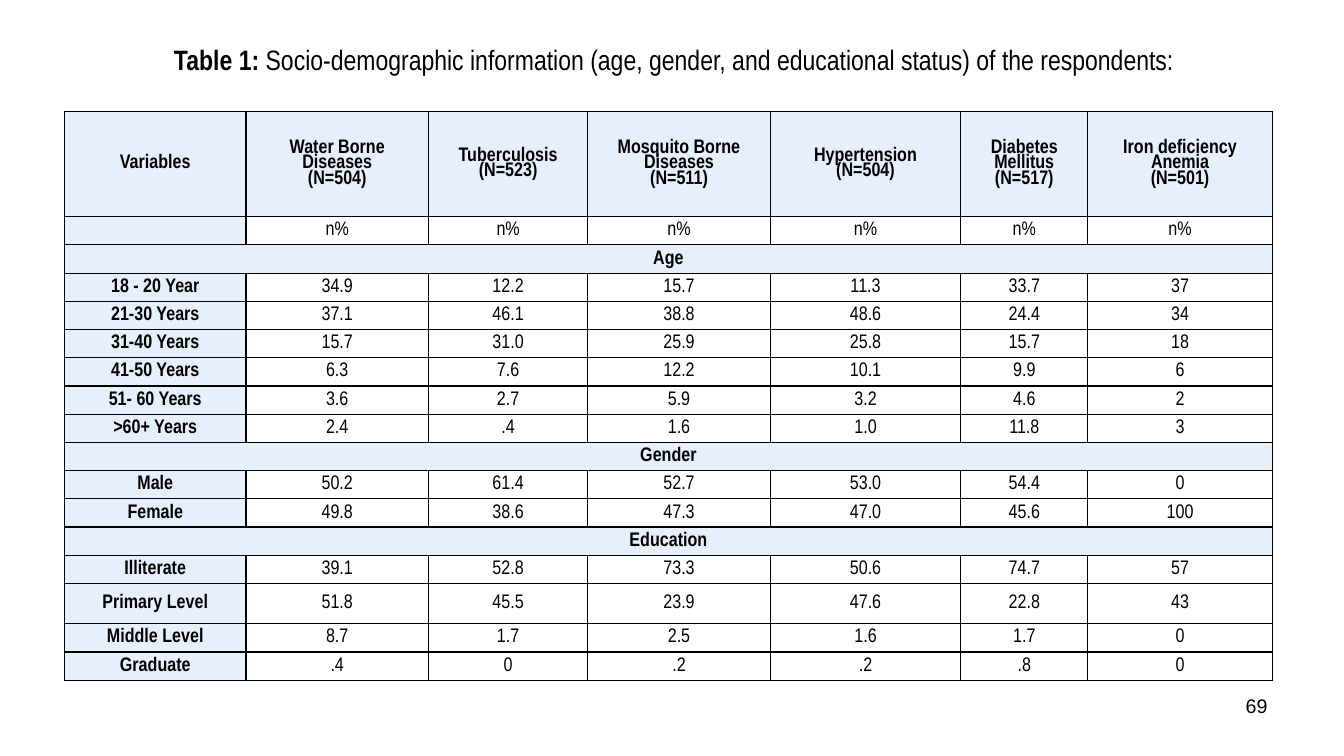
from dataclasses import dataclass

from lxml import etree
from pptx import Presentation
from pptx.dml.color import RGBColor
from pptx.enum.text import MSO_ANCHOR, MSO_AUTO_SIZE, PP_ALIGN
from pptx.oxml.ns import qn
from pptx.util import Inches, Pt

CENTER, RIGHT = PP_ALIGN.CENTER, PP_ALIGN.RIGHT
TOP, MIDDLE, BOTTOM = MSO_ANCHOR.TOP, MSO_ANCHOR.MIDDLE, MSO_ANCHOR.BOTTOM
NO_FIT = MSO_AUTO_SIZE.NONE


@dataclass(frozen=True)
class Theme:
    ink: str = "000000"
    tint: str = "E5F0FC"
    plain: str = "FFFFFF"
    font: str = "Arial Narrow"
    page_font: str = "Arial"
    title_size: int = 20
    body_size: int = 14
    head_gap: float = 0.83
    rule: int = 1


WIDTHS = [1.8, 1.81, 1.58, 1.81, 1.89, 1.26, 1.83]
HEAD_HIGH, ROW_HIGH, TALL_HIGH = 1.04, 0.28, 0.4
TALL_ROW = "Primary Level"

HEADS = [
    ["Variables"],
    ["Water Borne Diseases", "(N=504)"],
    ["Tuberculosis", "(N=523)"],
    ["Mosquito Borne Diseases", "(N=511)"],
    ["Hypertension", "(N=504)"],
    ["Diabetes Mellitus", "(N=517)"],
    ["Iron deficiency Anemia", "(N=501)"],
]

GROUPS = {
    "Age": [
        ["18 - 20 Year", "34.9", "12.2", "15.7", "11.3", "33.7", "37"],
        ["21-30 Years", "37.1", "46.1", "38.8", "48.6", "24.4", "34"],
        ["31-40 Years", "15.7", "31.0", "25.9", "25.8", "15.7", "18"],
        ["41-50 Years", "6.3", "7.6", "12.2", "10.1", "9.9", "6"],
        ["51- 60 Years", "3.6", "2.7", "5.9", "3.2", "4.6", "2"],
        [">60+ Years", "2.4", ".4", "1.6", "1.0", "11.8", "3"],
    ],
    "Gender": [
        ["Male", "50.2", "61.4", "52.7", "53.0", "54.4", "0"],
        ["Female", "49.8", "38.6", "47.3", "47.0", "45.6", "100"],
    ],
    "Education": [
        ["Illiterate", "39.1", "52.8", "73.3", "50.6", "74.7", "57"],
        ["Primary Level", "51.8", "45.5", "23.9", "47.6", "22.8", "43"],
        ["Middle Level", "8.7", "1.7", "2.5", "1.6", "1.7", "0"],
        ["Graduate", ".4", "0", ".2", ".2", ".8", "0"],
    ],
}


class Deck:
    def __init__(self, theme):
        self.theme = theme
        self.show = Presentation()
        self.show.slide_width = Inches(13.33)
        self.show.slide_height = Inches(7.5)
        self.slide = self.show.slides.add_slide(self.show.slide_layouts[5])

    def style(self, font, size, bold=False, face=None):
        font.name = face or self.theme.font
        font.size = Pt(size)
        font.bold = bold
        font.color.rgb = RGBColor.from_string(self.theme.ink)

    def run(self, para, text, size, bold=False, face=None):
        run = para.add_run()
        run.text = text
        self.style(run.font, size, bold, face)

    def frame(self, shape, box, anchor, align):
        """Place a text shape and return its first paragraph."""
        shape.left, shape.top, shape.width, shape.height = map(Inches, box)
        text = shape.text_frame
        text.word_wrap = True
        text.auto_size = NO_FIT
        text.vertical_anchor = anchor
        para = text.paragraphs[0]
        para.alignment = align
        return para

    def title(self, box, label, text):
        para = self.frame(self.slide.shapes.title, box, BOTTOM, CENTER)
        self.run(para, label, self.theme.title_size, bold=True)
        self.run(para, text, self.theme.title_size)

    def page(self, box, number):
        shape = self.slide.shapes.add_textbox(*map(Inches, box))
        para = self.frame(shape, box, TOP, RIGHT)
        self.run(para, number, self.theme.body_size, face=self.theme.page_font)

    def edge(self, cell):
        """Rule all four sides; lines must come before the fill."""
        props = cell._tc.get_or_add_tcPr()
        for place, side in enumerate(("a:lnL", "a:lnR", "a:lnT", "a:lnB")):
            line = etree.Element(qn(side), w=str(Pt(self.theme.rule)))
            fill = etree.SubElement(line, qn("a:solidFill"))
            etree.SubElement(fill, qn("a:srgbClr"), val=self.theme.ink)
            props.insert(place, line)

    def cell(self, cell, lines, strong, gap=None):
        theme = self.theme
        cell.margin_left = cell.margin_right = Inches(0.07)
        cell.margin_top = cell.margin_bottom = 0
        cell.vertical_anchor = MIDDLE
        cell.fill.solid()
        color = theme.tint if strong else theme.plain
        cell.fill.fore_color.rgb = RGBColor.from_string(color)
        self.edge(cell)
        text = cell.text_frame
        for i, line in enumerate(lines):
            para = text.add_paragraph() if i else text.paragraphs[0]
            para.alignment = CENTER
            if gap:
                para.line_spacing = gap
            if line:
                self.run(para, line, theme.body_size, strong)
            else:
                self.style(para.font, theme.body_size)

    def table(self, left, top, heads, groups):
        blank = [""] * (len(heads) - 1)
        rows = [heads, [[""]] + [["n%"] for _ in blank]]
        for name, lines in groups.items():
            rows.append([[text] for text in [name] + blank])
            rows += [[[text] for text in line] for line in lines]
        highs = [TALL_HIGH if row[0] == [TALL_ROW] else ROW_HIGH for row in rows]
        highs[0] = HEAD_HIGH
        sizes = map(Inches, (left, top, sum(WIDTHS), sum(highs)))
        grid = self.slide.shapes.add_table(len(rows), len(heads), *sizes).table
        for column, width in zip(grid.columns, WIDTHS):
            column.width = Inches(width)
        for r, row in enumerate(rows):
            grid.rows[r].height = Inches(highs[r])
            group = row[0][0] in groups
            for c, lines in enumerate(row):
                strong = r == 0 or c == 0 or group
                gap = self.theme.head_gap if r == 0 else None
                self.cell(grid.cell(r, c), lines, strong, gap)
            if group:
                grid.cell(r, 0).merge(grid.cell(r, len(heads) - 1))


def main():
    deck = Deck(Theme())
    deck.title(
        (0.34, 0.31, 12.69, 0.5),
        "Table 1: ",
        "Socio-demographic information (age, gender, and educational status) "
        "of the respondents:",
    )
    deck.table(0.64, 1.11, HEADS, GROUPS)
    deck.page((9.56, 6.83, 3.11, 0.52), "69")
    deck.show.save("out.pptx")


if __name__ == "__main__":
    main()
